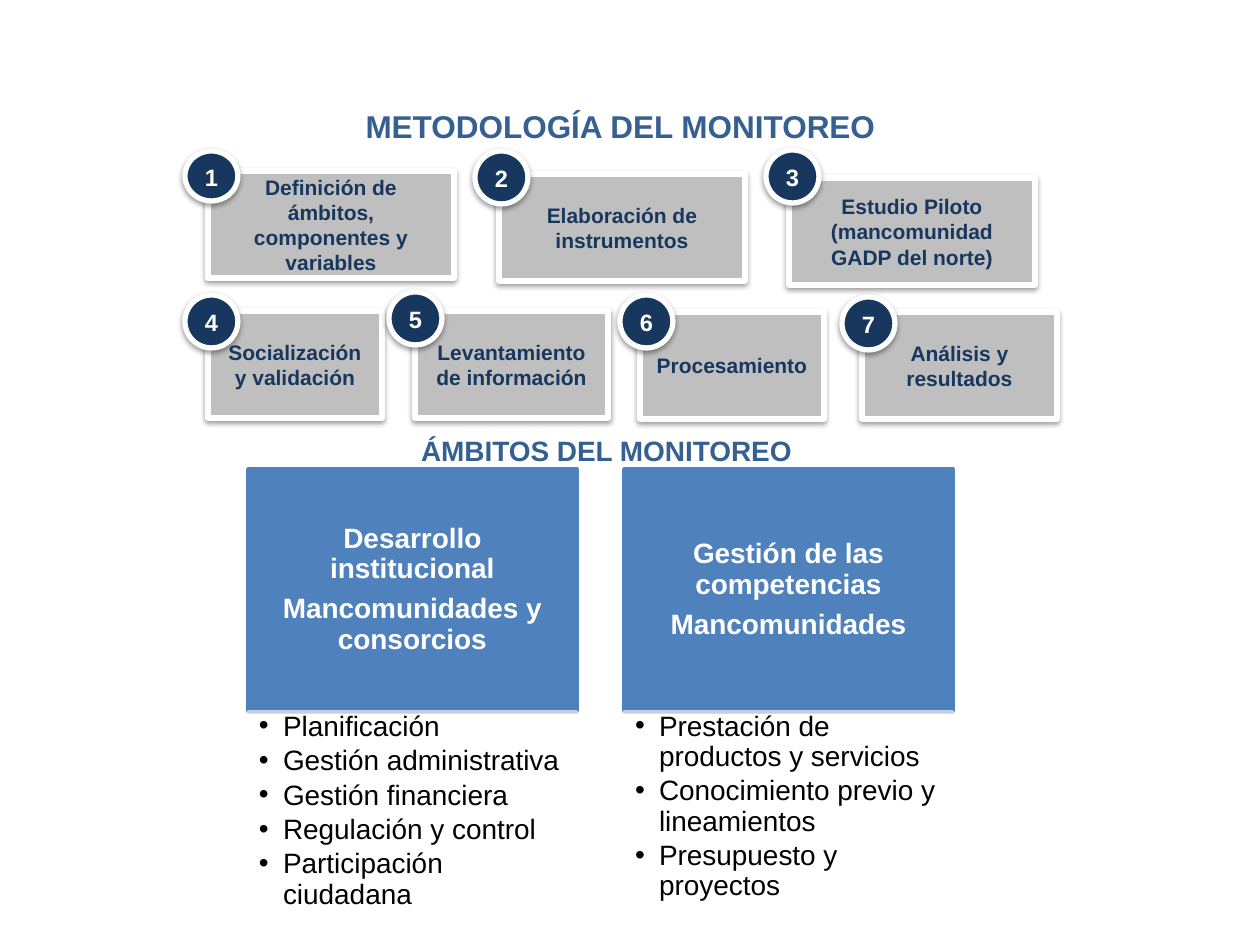
from dataclasses import dataclass

from lxml import etree
from pptx import Presentation, util as u
from pptx.dml.color import RGBColor
from pptx.enum import shapes, text
from pptx.oxml import ns

EMU_PER_PX = 914400 / 126


@dataclass(frozen=True)
class Theme:
    font: str = "Arial"
    navy: str = "17375E"
    heading: str = "376092"
    grey: str = "BFBFBF"
    blue: str = "4F81BD"
    pale: str = "D0D8E8"
    white: str = "FFFFFF"
    black: str = "000000"
    title_size: float = 18
    body_size: float = 16
    badge_size: float = 13.5
    step_size: float = 12


THEME = Theme()


@dataclass(frozen=True)
class Box:
    left: int
    top: int
    width: int
    height: int


@dataclass(frozen=True)
class Step:
    label: str
    box: Box
    badge: Box


@dataclass(frozen=True)
class Scope:
    left: int
    headings: tuple[str, ...]
    items: tuple[str, ...]


STEPS = (
    Step("Definición de ámbitos, componentes y variables",
         Box(208, 171, 246, 107), Box(185, 151, 53, 50)),
    Step("Elaboración de instrumentos",
         Box(499, 174, 246, 107), Box(475, 151, 53, 53)),
    Step("Estudio Piloto (mancomunidad GADP del norte)",
         Box(789, 178, 246, 107), Box(766, 150, 53, 53)),
    Step("Socialización y validación",
         Box(208, 311, 174, 107), Box(185, 295, 53, 53)),
    Step("Levantamiento de información",
         Box(415, 311, 193, 107), Box(389, 292, 53, 53)),
    Step("Procesamiento",
         Box(640, 312, 184, 107), Box(620, 295, 53, 53)),
    Step("Análisis y resultados",
         Box(862, 312, 195, 107), Box(842, 297, 53, 53)),
)

SCOPES = (
    Scope(248, ("Desarrollo institucional", "Mancomunidades y consorcios"),
          ("Planificación", "Gestión administrativa", "Gestión financiera",
           "Regulación y control", "Participación ciudadana")),
    Scope(624, ("Gestión de las competencias", "Mancomunidades"),
          ("Prestación de productos y servicios",
           "Conocimiento previo y lineamientos", "Presupuesto y proyectos")),
)
SCOPE_WIDTH, SCOPE_TOP, SCOPE_HEIGHT = 329, 469, 242
STRIP_TOP = 712
LIST_TOP, LIST_HEIGHT = 712, 202


def px(length: float) -> u.Emu:
    return u.Emu(round(length * EMU_PER_PX))


def apply(target, formats: dict) -> None:
    for name, value in formats.items():
        setattr(target, name, value)


def place(shape, box: Box) -> None:
    apply(shape, {name: px(getattr(box, name))
                  for name in ("left", "top", "width", "height")})


def bring_to_front(slide, shape) -> None:
    slide.shapes.element.append(shape.element)


def write(shape, lines: tuple[str, ...], size: float, color: str, bold: bool = True,
          margins: tuple[int, int, int, int] = (13, 6, 13, 6),
          anchor=text.MSO_ANCHOR.MIDDLE, **paragraph_formats) -> None:
    """Fill a shape with one formatted paragraph per line; margins are left, top, right, bottom."""
    frame = shape.text_frame
    left, top, right, bottom = map(px, margins)
    apply(frame, {"word_wrap": True, "auto_size": text.MSO_AUTO_SIZE.NONE,
                  "vertical_anchor": anchor, "margin_left": left, "margin_top": top,
                  "margin_right": right, "margin_bottom": bottom})
    for index, line in enumerate(lines):
        paragraph = frame.add_paragraph() if index else frame.paragraphs[0]
        apply(paragraph, {"alignment": text.PP_ALIGN.CENTER, "space_before": u.Pt(0),
                          **paragraph_formats})
        run = paragraph.add_run()
        run.text = line
        apply(run.font, {"name": THEME.font, "size": u.Pt(size), "bold": bold})
        run.font.color.rgb = RGBColor.from_string(color)


def add_solid(slide, kind, box: Box, fill: str, line: str, line_width: float):
    shape = slide.shapes.add_shape(
        kind, px(box.left), px(box.top), px(box.width), px(box.height))
    shape.shadow.inherit = False
    shape.fill.solid()
    shape.fill.fore_color.rgb = RGBColor.from_string(fill)
    shape.line.color.rgb = RGBColor.from_string(line)
    shape.line.width = u.Pt(line_width)
    return shape


def add_shadow(shape) -> None:
    effects = shape.element.spPr.find(ns.qn("a:effectLst"))
    shadow = etree.SubElement(effects, ns.qn("a:outerShdw"), blurRad=str(u.Pt(3.1)),
                              dist=str(u.Pt(1.6)), dir="5400000", rotWithShape="0")
    color = etree.SubElement(shadow, ns.qn("a:srgbClr"), val=THEME.black)
    etree.SubElement(color, ns.qn("a:alpha"), val="38000")


def set_opacity(shape, percent: int) -> None:
    """Apply one opacity to the fill and the line."""
    for color in shape.element.spPr.iter(ns.qn("a:srgbClr")):
        etree.SubElement(color, ns.qn("a:alpha"), val=str(percent * 1000))


def add_bullets(shape) -> None:
    for paragraph in shape.text_frame.paragraphs:
        properties = paragraph._p.get_or_add_pPr()
        properties.set("marL", str(px(24)))
        properties.set("indent", str(px(-24)))
        etree.SubElement(properties, ns.qn("a:buFont"), typeface=THEME.font)
        etree.SubElement(properties, ns.qn("a:buChar"), char="•")


def draw_step(slide, number: int, step: Step) -> None:
    box = add_solid(slide, shapes.MSO_SHAPE.RECTANGLE, step.box, THEME.grey, THEME.white, 3)
    write(box, (step.label,), THEME.step_size, THEME.navy)
    badge = add_solid(slide, shapes.MSO_SHAPE.OVAL, step.badge, THEME.navy, THEME.white, 3)
    write(badge, (str(number),), THEME.badge_size, THEME.white, margins=(0, 2, 0, 0))
    for shape in (box, badge):
        add_shadow(shape)


def draw_scope(slide, scope: Scope, body) -> None:
    """Draw a blue card, the strip under it and its bulleted list."""
    rectangle = shapes.MSO_SHAPE.RECTANGLE
    card = add_solid(slide, rectangle, Box(scope.left, SCOPE_TOP, SCOPE_WIDTH, SCOPE_HEIGHT),
                     THEME.blue, THEME.blue, 2)
    write(card, scope.headings, THEME.body_size, THEME.white, margins=(15, 9, 15, 9),
          line_spacing=0.9, space_after=u.Pt(5.6))
    strip = add_solid(slide, rectangle, Box(scope.left, STRIP_TOP, SCOPE_WIDTH, 0),
                      THEME.pale, THEME.pale, 2)
    set_opacity(strip, 90)
    place(body, Box(scope.left, LIST_TOP, SCOPE_WIDTH, LIST_HEIGHT))
    write(body, scope.items, THEME.body_size, THEME.black, bold=False,
          margins=(11, 0, 15, 0), anchor=text.MSO_ANCHOR.TOP,
          alignment=text.PP_ALIGN.LEFT, line_spacing=0.9, space_after=u.Pt(2.4))
    add_bullets(body)
    bring_to_front(slide, body)


def main() -> None:
    presentation = Presentation()
    apply(presentation, {"slide_width": px(1260), "slide_height": px(945)})
    slide = presentation.slides.add_slide(
        presentation.slide_layouts.get_by_name("Two Content"))
    title, *bodies = slide.placeholders

    place(title, Box(219, 101, 803, 50))
    write(title, ("METODOLOGÍA DEL MONITOREO",), THEME.title_size, THEME.heading,
          anchor=text.MSO_ANCHOR.TOP)
    for number, step in enumerate(STEPS, 1):
        draw_step(slide, number, step)

    subtitle = slide.shapes.add_textbox(px(205), px(428), px(803), px(47))
    write(subtitle, ("ÁMBITOS DEL MONITOREO",), THEME.body_size, THEME.heading,
          anchor=text.MSO_ANCHOR.TOP)
    for scope, body in zip(SCOPES, bodies):
        draw_scope(slide, scope, body)

    presentation.save("out.pptx")


if __name__ == "__main__":
    main()
